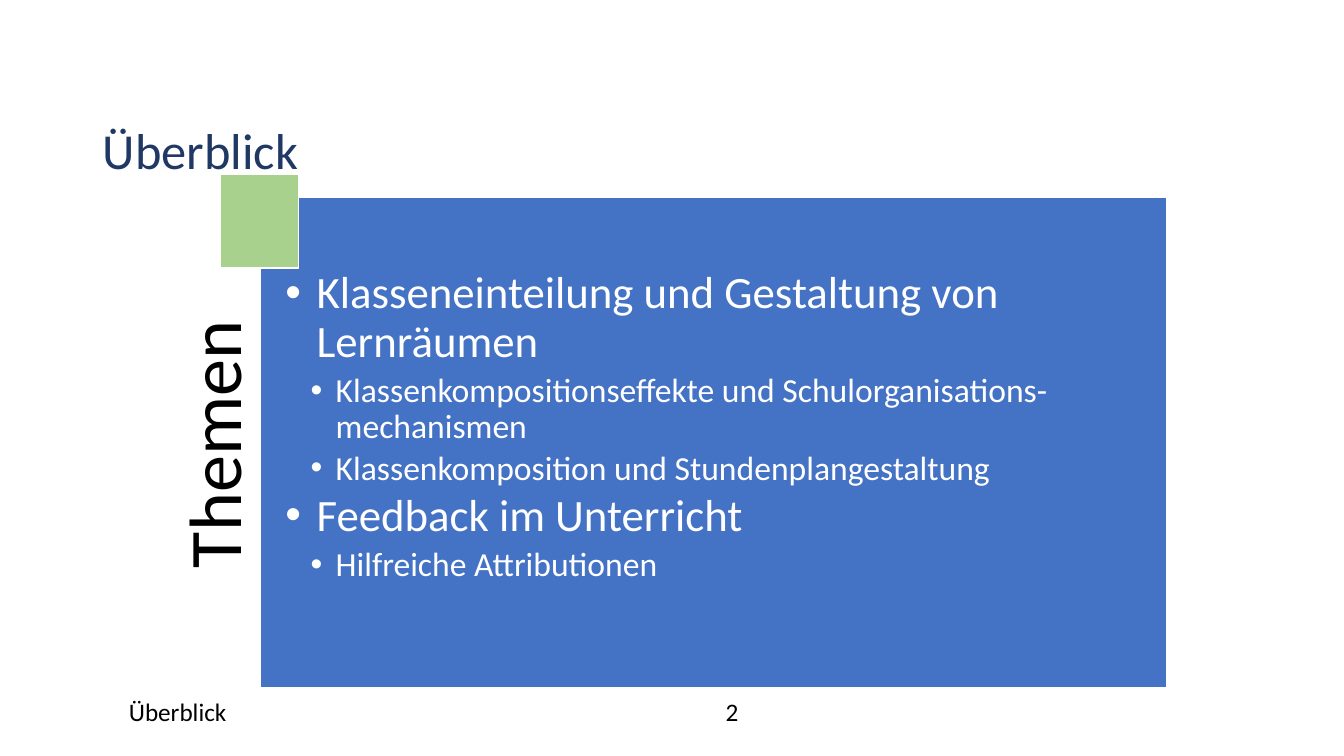
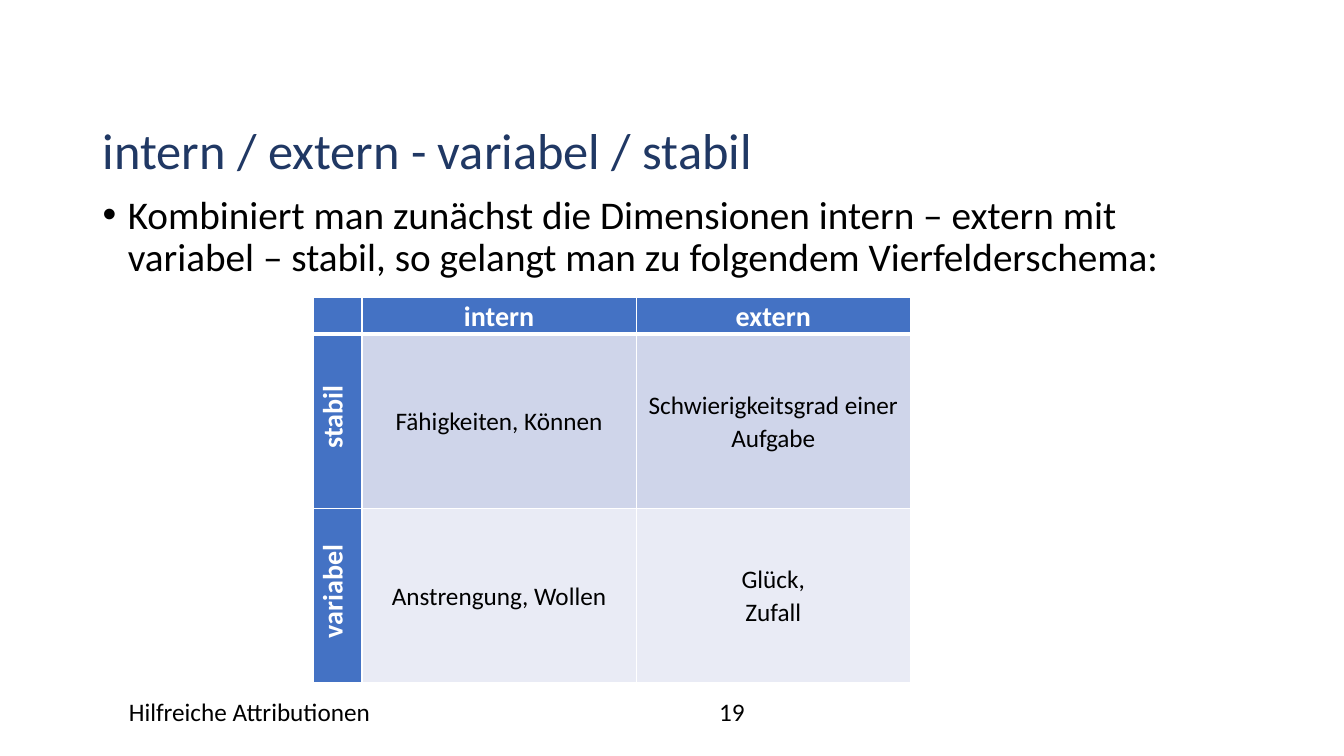
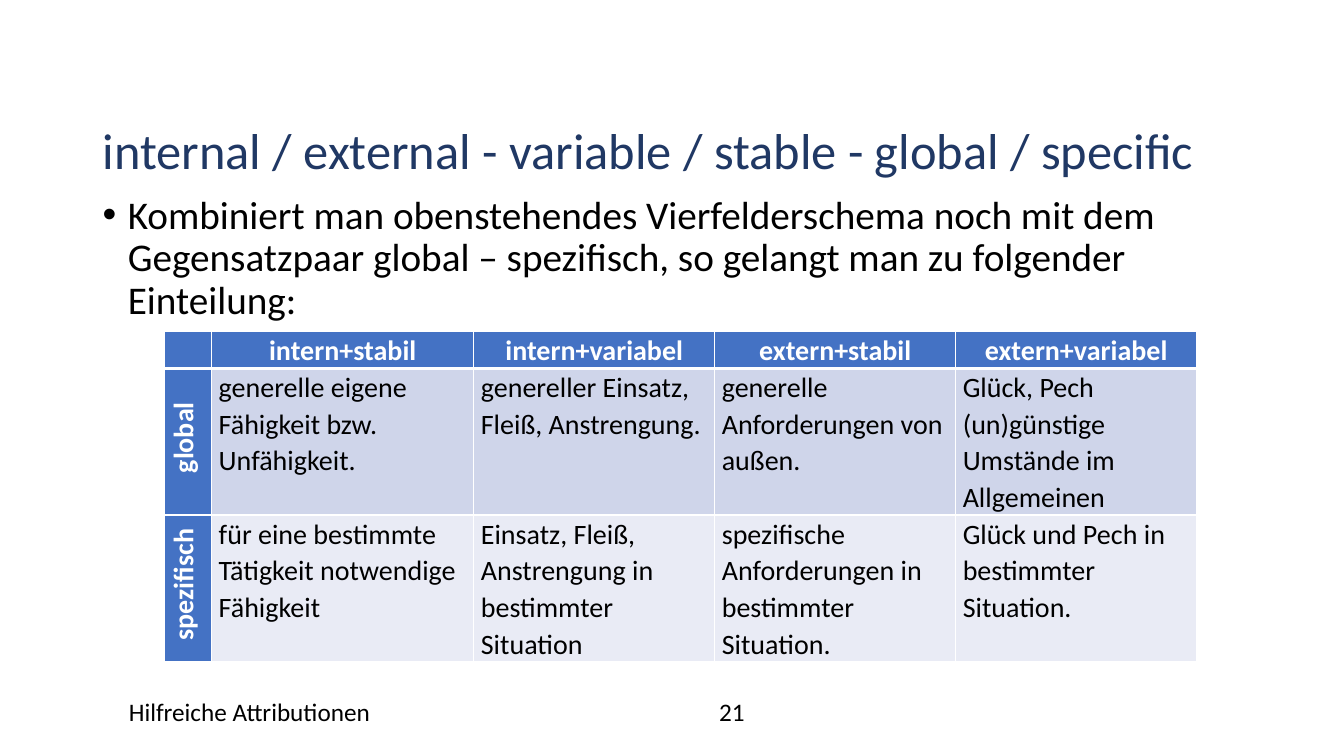
from lxml.etree import SubElement
from pptx import Presentation
from pptx.dml.color import RGBColor
from pptx.enum.shapes import MSO_SHAPE
from pptx.enum.text import MSO_ANCHOR, MSO_AUTO_SIZE, PP_ALIGN
from pptx.oxml.ns import qn
from pptx.util import Inches, Pt

NAVY = RGBColor(0x20, 0x38, 0x64)
BLUE = RGBColor(0x44, 0x72, 0xC4)
GREEN = RGBColor(0xA9, 0xD1, 0x8E)
BAND_DARK = RGBColor(0xCF, 0xD5, 0xEA)
BAND_LIGHT = RGBColor(0xE9, 0xEB, 0xF5)
BLACK = RGBColor(0, 0, 0)
WHITE = RGBColor(0xFF, 0xFF, 0xFF)
FONT = "Calibri"

TITLE_BOX = (0.92, 1.2, 11.5, 0.97)
BODY_BOX = (0.92, 1.89, 11.5, 4.51)
FOOTER_BOX = (1.18, 6.86, 4.5, 0.4)
NUMBER_BOX = (5.76, 6.86, 3, 0.4)
PANEL_BOX = (2.58, 1.96, 8.99, 4.86)
ACCENT_BOX = (2.19, 1.73, 0.77, 0.93)
LABEL_BOX = (0.24, 3.98, 3.86, 0.82)
DEFAULT_INSETS = (0.1, 0.05, 0.1, 0.05)
CELL_INSETS = (0.07, 0, 0.07, 0)
SIDES = ("left", "top", "right", "bottom")

TOPIC_LEVELS = [
    {"size": 32, "indent": 0.31, "hanging": 0.31},
    {"size": 24, "indent": 0.5, "hanging": 0.25},
]

SLIDES = [
    {
        "title": "Überblick", "footer": "Überblick", "number": "2",
        "label": "Themen",
        "topics": [
            (0, "Klasseneinteilung und Gestaltung von Lernräumen"),
            (1, "Klassenkompositionseffekte und Schulorganisations-mechanismen"),
            (1, "Klassenkomposition und Stundenplangestaltung"),
            (0, "Feedback im Unterricht"),
            (1, "Hilfreiche Attributionen"),
        ],
    },
    {
        "title": "intern / extern - variabel / stabil",
        "footer": "Hilfreiche Attributionen", "number": "19",
        "body": "Kombiniert man zunächst die Dimensionen intern – extern mit "
                "variabel – stabil, so gelangt man zu folgendem Vierfelderschema:",
        "table": {
            "origin": (3.11, 2.95),
            "columns": (0.48, 2.72, 2.72),
            "rows": (0.31, 1.73, 1.73),
            "cell_format": {"size": 18, "align": PP_ALIGN.CENTER},
            "anchor": MSO_ANCHOR.MIDDLE,
            "cells": [
                ("", "intern", "extern"),
                ("stabil", "Fähigkeiten, Können", "Schwierigkeitsgrad einer Aufgabe"),
                ("variabel", "Anstrengung, Wollen", "Glück,\nZufall"),
            ],
        },
    },
    {
        "title": "internal / external - variable / stable - global / specific",
        "footer": "Hilfreiche Attributionen", "number": "21",
        "body": "Kombiniert man obenstehendes Vierfelderschema noch mit dem "
                "Gegensatzpaar global – spezifisch, so gelangt man zu folgender Einteilung:",
        "table": {
            "origin": (1.63, 3.29),
            "columns": (0.47, 2.6, 2.39, 2.39, 2.39),
            "rows": (0.26, 1.43, 1.43),
            "cell_format": {"size": 20},
            "anchor": MSO_ANCHOR.TOP,
            "cells": [
                ("", "intern+stabil", "intern+variabel", "extern+stabil", "extern+variabel"),
                ("global",
                 "generelle eigene Fähigkeit bzw. Unfähigkeit.",
                 "genereller Einsatz, Fleiß, Anstrengung.",
                 "generelle Anforderungen von außen.",
                 "Glück, Pech (un)günstige Umstände im Allgemeinen"),
                ("spezifisch",
                 "für eine bestimmte Tätigkeit notwendige Fähigkeit",
                 "Einsatz, Fleiß, Anstrengung in bestimmter Situation",
                 "spezifische Anforderungen in bestimmter Situation.",
                 "Glück und Pech in bestimmter Situation."),
            ],
        },
    },
]


def inches(values):
    return [Inches(value) for value in values]


def write_paragraph(paragraph, text, size, color=BLACK, bold=False, align=PP_ALIGN.LEFT,
                    spacing=1.0, after=0, indent=0, hanging=0):
    paragraph_format = {"alignment": align, "line_spacing": spacing,
                        "space_before": Pt(0), "space_after": Pt(after)}
    for name, value in paragraph_format.items():
        setattr(paragraph, name, value)
    properties = paragraph._p.get_or_add_pPr()
    properties.set("marL", str(Inches(indent)))
    properties.set("indent", str(-Inches(hanging)))
    if hanging:
        SubElement(properties, qn("a:buFont"), typeface="Arial")
        SubElement(properties, qn("a:buChar"), char="•")
    run = paragraph.add_run()
    run.text = text
    for name, value in {"name": FONT, "size": Pt(size), "bold": bold}.items():
        setattr(run.font, name, value)
    run.font.color.rgb = color


def write(frame, items):
    for position, (text, text_format) in enumerate(items):
        paragraph = frame.add_paragraph() if position else frame.paragraphs[0]
        write_paragraph(paragraph, text, **text_format)


def format_frame(frame, insets=DEFAULT_INSETS):
    frame_format = {"word_wrap": True, "auto_size": MSO_AUTO_SIZE.NONE,
                    "vertical_anchor": MSO_ANCHOR.TOP}
    frame_format.update({f"margin_{side}": Inches(inset) for side, inset in zip(SIDES, insets)})
    for name, value in frame_format.items():
        setattr(frame, name, value)


def add_text(slide, box, text, insets=DEFAULT_INSETS, **text_format):
    shape = slide.shapes.add_textbox(*inches(box))
    format_frame(shape.text_frame, insets)
    write(shape.text_frame, [(text, text_format)])
    return shape


def add_rectangle(slide, box, color):
    shape = slide.shapes.add_shape(MSO_SHAPE.RECTANGLE, *inches(box))
    shape.shadow.inherit = False
    shape.fill.solid()
    shape.fill.fore_color.rgb = color
    shape.line.color.rgb = WHITE
    shape.line.width = Pt(1)
    return shape


def add_topics(slide, label, topics):
    label_shape = add_text(slide, LABEL_BOX, label, insets=(0, 0, 0.72, 0), size=53,
                           align=PP_ALIGN.RIGHT, spacing=0.9)
    label_shape.rotation = 270
    panel = add_rectangle(slide, PANEL_BOX, BLUE)
    format_frame(panel.text_frame, (0.25, 0.72, 0.25, 0.25))
    items = []
    for level, text in topics:
        style = TOPIC_LEVELS[level]
        items.append((text, {**style, "color": WHITE, "spacing": 0.9,
                             "after": round(style["size"] * 0.15, 1)}))
    write(panel.text_frame, items)
    add_rectangle(slide, ACCENT_BOX, GREEN)


def add_borders(cell, row):
    widths = {"L": 1, "R": 1, "T": 3 if row == 1 else 1, "B": 3 if row == 0 else 1}
    for side, width in widths.items():
        line = SubElement(cell._tc.get_or_add_tcPr(), qn(f"a:ln{side}"), w=str(Pt(width)))
        fill = SubElement(line, qn("a:solidFill"))
        SubElement(fill, qn("a:srgbClr"), val=str(WHITE))


def add_grid(slide, grid):
    columns, rows = grid["columns"], grid["rows"]
    frame = slide.shapes.add_table(len(rows), len(columns), *inches(grid["origin"]),
                                   Inches(sum(columns)), Inches(sum(rows)))
    table = frame.table
    for column, width in zip(table.columns, columns):
        column.width = Inches(width)
    for row, height in zip(table.rows, rows):
        row.height = Inches(height)
    heading = {"size": 20, "color": WHITE, "bold": True, "align": PP_ALIGN.CENTER}
    bands = (BLUE, BAND_DARK, BAND_LIGHT)
    for row, texts in enumerate(grid["cells"]):
        for column, text in enumerate(texts):
            cell = table.cell(row, column)
            is_heading = row == 0 or column == 0
            is_side = row > 0 and column == 0
            text_format = {**(heading if is_heading else grid["cell_format"]),
                           "spacing": 1.07, "indent": 0.08 if is_side else 0}
            for side, inset in zip(SIDES, CELL_INSETS):
                setattr(cell, f"margin_{side}", Inches(inset))
            cell.vertical_anchor = MSO_ANCHOR.TOP if is_heading else grid["anchor"]
            if is_side:
                cell._tc.get_or_add_tcPr().set("vert", "vert270")
            add_borders(cell, row)
            cell.fill.solid()
            cell.fill.fore_color.rgb = BLUE if is_heading else bands[row]
            if text:
                write(cell.text_frame, [(line, text_format) for line in text.split("\n")])


def add_slide(presentation, content):
    slide = presentation.slides.add_slide(presentation.slide_layouts[5])
    title = slide.shapes.title
    title.left, title.top, title.width, title.height = inches(TITLE_BOX)
    format_frame(title.text_frame)
    write(title.text_frame, [(content["title"], {"size": 36, "color": NAVY, "spacing": 0.9})])
    if "topics" in content:
        add_topics(slide, content["label"], content["topics"])
    if "body" in content:
        add_text(slide, BODY_BOX, content["body"], size=28, spacing=0.9,
                 indent=0.25, hanging=0.25)
    add_text(slide, FOOTER_BOX, content["footer"], size=18)
    add_text(slide, NUMBER_BOX, content["number"], size=18, align=PP_ALIGN.CENTER)
    if "table" in content:
        add_grid(slide, content["table"])


def main():
    presentation = Presentation()
    presentation.slide_width = Inches(13.33)
    presentation.slide_height = Inches(7.5)
    for content in SLIDES:
        add_slide(presentation, content)
    presentation.save("out.pptx")


if __name__ == "__main__":
    main()
